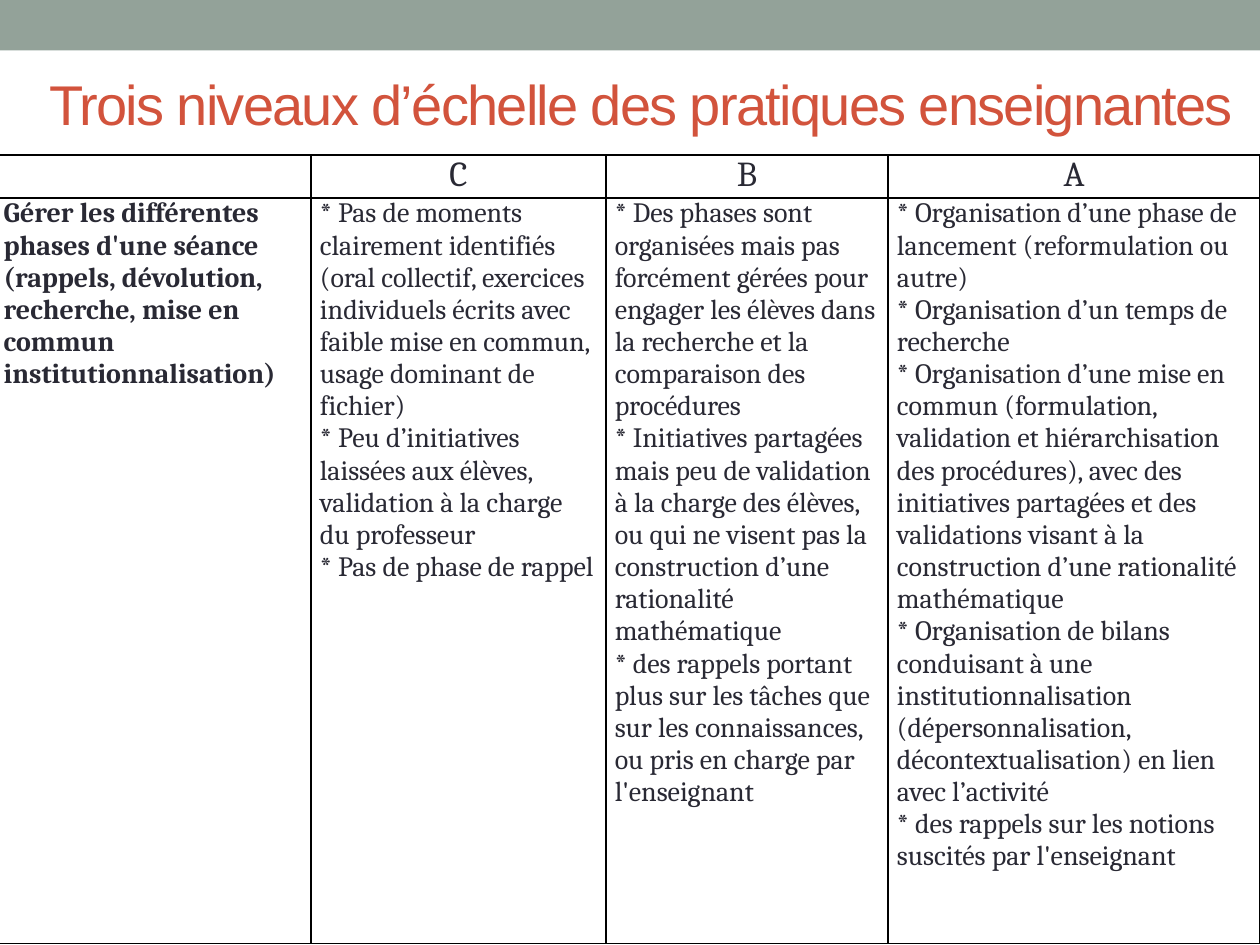
from lxml import etree
from pptx import Presentation
from pptx.dml.color import RGBColor
from pptx.enum.shapes import MSO_SHAPE as Shape
from pptx.enum.text import MSO_ANCHOR as Anchor, PP_ALIGN as Align
from pptx.oxml.ns import qn
from pptx.util import Inches, Pt

SAGE = RGBColor(0x93, 0xA2, 0x99)
RUST = RGBColor(0xD2, 0x53, 0x3C)
INK = RGBColor(0x29, 0x29, 0x34)
WHITE = RGBColor(0xFF, 0xFF, 0xFF)


def write_text(frame, text, size=16, font="Cambria", color=INK, bold=False,
               align=Align.LEFT, after=0, spacing=None):
    for index, line in enumerate(text.split("\n")):
        paragraph = frame.add_paragraph() if index else frame.paragraphs[0]
        paragraph.alignment = align
        paragraph.space_after = Pt(after)
        run = paragraph.add_run()
        run.text = line
        run.font.size = Pt(size)
        run.font.name = font
        run.font.bold = bold
        run.font.color.rgb = color
        if spacing is not None:
            run._r.get_or_add_rPr().set("spc", str(spacing))


def add_borders(cell):
    properties = cell._tc.get_or_add_tcPr()
    for index, side in enumerate(("a:lnL", "a:lnR", "a:lnT", "a:lnB")):
        line = etree.Element(qn(side), w=str(Pt(1)))
        fill = etree.SubElement(line, qn("a:solidFill"))
        etree.SubElement(fill, qn("a:srgbClr"), val="000000")
        properties.insert(index, line)


presentation = Presentation()
presentation.slide_width = Inches(10)
presentation.slide_height = Inches(7.5)
slide = presentation.slides.add_slide(presentation.slide_layouts[6])

band = slide.shapes.add_shape(Shape.RECTANGLE, 0, 0, Inches(10), Inches(0.4))
band.shadow.inherit = False
band.fill.solid()
band.fill.fore_color.rgb = SAGE
band.line.fill.background()

practices = [
    "Gérer les différentes phases d'une séance (rappels, dévolution, recherche, "
    "mise en commun institutionnalisation)",
    "* Pas de moments clairement identifiés (oral collectif, exercices individuels "
    "écrits avec faible mise en commun, usage dominant de fichier)\n"
    "* Peu d’initiatives laissées aux élèves, validation à la charge du professeur\n"
    "* Pas de phase de rappel",
    "* Des phases sont organisées mais pas forcément gérées pour engager les élèves "
    "dans la recherche et la comparaison des procédures\n"
    "* Initiatives partagées mais peu de validation à la charge des élèves, ou qui ne "
    "visent pas la construction d’une rationalité mathématique\n"
    "* des rappels portant plus sur les tâches que sur les connaissances, ou pris en "
    "charge par l'enseignant",
    "* Organisation d’une phase de lancement (reformulation ou autre)\n"
    "* Organisation d’un temps de recherche\n"
    "* Organisation d’une mise en commun (formulation, validation et hiérarchisation "
    "des procédures), avec des initiatives partagées et des validations visant à la "
    "construction d’une rationalité mathématique\n"
    "* Organisation de bilans conduisant à une institutionnalisation "
    "(dépersonnalisation, décontextualisation) en lien avec l’activité\n"
    "* des rappels sur les notions suscités par l'enseignant",
]
levels = ["", "C", "B", "A"]
column_widths = [2.51, 2.34, 2.24, 2.95]
row_heights = [0.34, 5.92]

table = slide.shapes.add_table(2, 4, Inches(-0.04), Inches(1.23),
                               Inches(sum(column_widths)), Inches(sum(row_heights))).table
table.first_row = False
table.horz_banding = False
for column, width in zip(table.columns, column_widths):
    column.width = Inches(width)
for row, height in zip(table.rows, row_heights):
    row.height = Inches(height)

for cell in table.iter_cells():
    cell.margin_left = cell.margin_right = Inches(0.07)
    cell.margin_top = cell.margin_bottom = 0
    cell.fill.solid()
    cell.fill.fore_color.rgb = WHITE
    add_borders(cell)

for index, (level, practice) in enumerate(zip(levels, practices)):
    if level:
        write_text(table.cell(0, index).text_frame, level, size=20, align=Align.CENTER)
    is_heading = index == 0
    write_text(table.cell(1, index).text_frame, practice, bold=is_heading,
               after=12 if is_heading else 0)

title = slide.shapes.add_textbox(Inches(0.18), Inches(0.5), Inches(9.82), Inches(1.08))
title.text_frame.word_wrap = True
title.text_frame.vertical_anchor = Anchor.TOP
write_text(title.text_frame, "Trois niveaux d’échelle des pratiques enseignantes",
           size=32, font="Arial", color=RUST, align=Align.CENTER, spacing=-100)

presentation.save("out.pptx")
